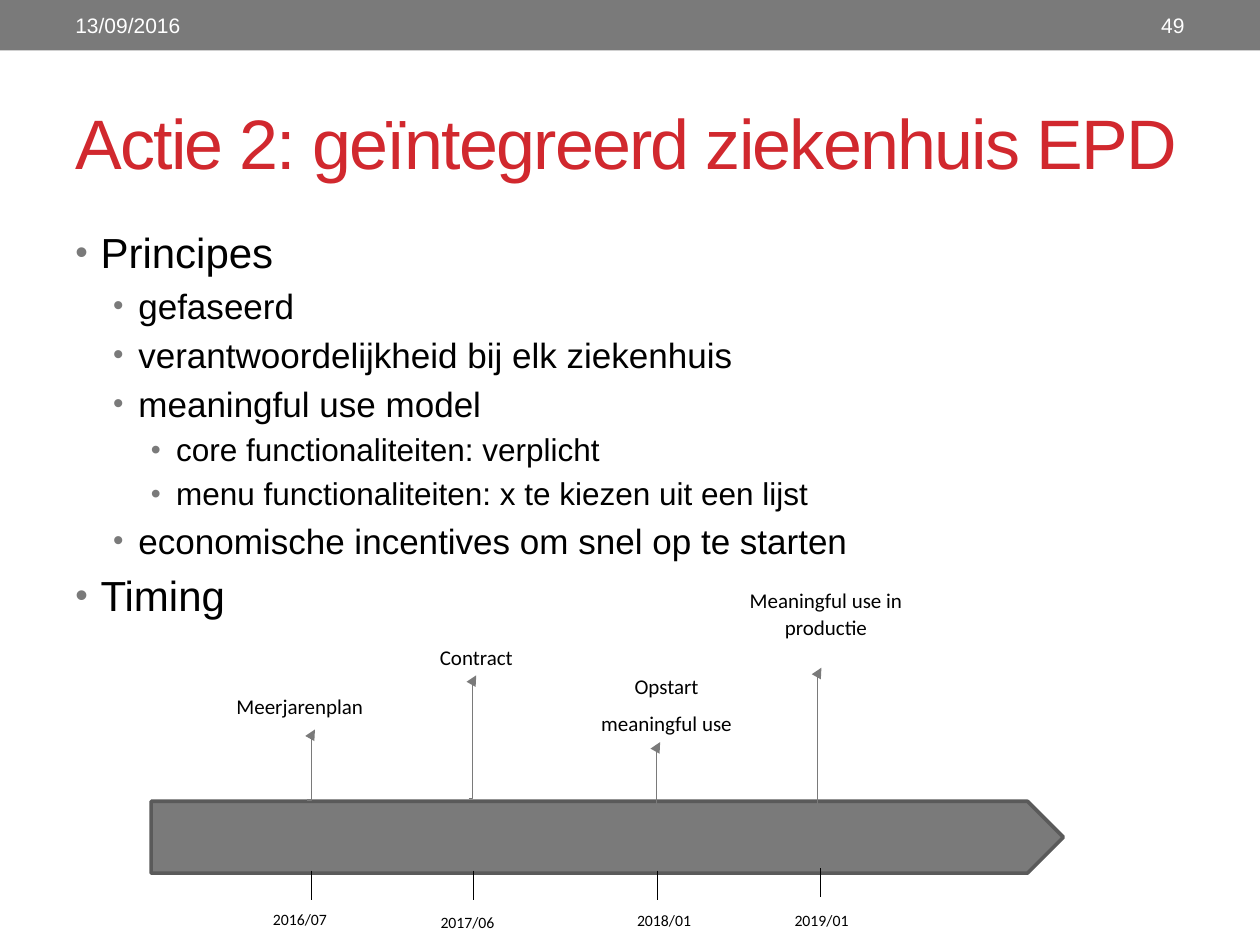
import pptx
import pptx.util
import pptx.dml.color
import pptx.enum.shapes
import pptx.enum.text
import pptx.oxml
import pptx.oxml.ns
import lxml.etree

Pt = pptx.util.Pt
RGBColor = pptx.dml.color.RGBColor
Align = pptx.enum.text.PP_ALIGN
Anchor = pptx.enum.text.MSO_ANCHOR
Shape = pptx.enum.shapes.MSO_SHAPE
Connector = pptx.enum.shapes.MSO_CONNECTOR

RED = RGBColor(0xD1, 0x28, 0x2E)
GREY = RGBColor(0x7A, 0x7A, 0x7A)
DARK_GREY = RGBColor(0x5A, 0x5A, 0x5A)
BLACK = RGBColor(0, 0, 0)
WHITE = RGBColor(255, 255, 255)

SLIDE_WIDTH, SLIDE_HEIGHT = pptx.util.Inches(10), pptx.util.Inches(7.5)
COLUMN, ROW = SLIDE_WIDTH / 100, SLIDE_HEIGHT / 75

HEADER_BOX = (0, 0, 100, 4)
TITLE_BOX = (5, 5.8, 90, 10.8)
BODY_BOX = (5, 17.5, 90, 53.3)
TIMELINE_BOX = (12, 46, 72.4, 29.3)

LEVELS = [(24, 0.2, 85), (20, 0.5, 85), (18, 0.8, 90)]
HANGING = 0.2
OUTLINE = [
    (0, "Principes"),
    (1, "gefaseerd"),
    (1, "verantwoordelijkheid bij elk ziekenhuis"),
    (1, "meaningful use model"),
    (2, "core functionaliteiten: verplicht"),
    (2, "menu functionaliteiten: x te kiezen uit een lijst"),
    (1, "economische incentives om snel op te starten"),
    (0, "Timing"),
]

BAR = (0, 17.6, 72.4, 5.7)
ELBOW_WIDTH, TICK_LENGTH = 0.6, 2.3
DATE_WIDTH, DATE_HEIGHT = 8.8, 3.5
MILESTONES = [
    dict(label=["Meerjarenplan"], label_box=(4.3, 8.5, 15, 3.5), wrap=False,
         arrow=(12.4, 17.5, 11.9), tick=(12.7, 23.1),
         date="2016/07", date_at=(7.4, 25.7)),
    dict(label=["Contract"], label_box=(17.2, 4.6, 17.2, 6), wrap=True,
         arrow=(25.2, 17.4, 7.6), tick=(25.6, 23.1),
         date="2017/06", date_at=(20.7, 25.9)),
    dict(label=["Opstart", "meaningful use"], label_box=(32.3, 6.9, 17.2, 7), wrap=True,
         arrow=(39.8, 18, 12.9), tick=(40.2, 23.1),
         date="2018/01", date_at=(36.3, 25.8)),
    dict(label=["Meaningful use in productie"], label_box=(44.5, 0.1, 18.1, 5.9), wrap=True,
         arrow=(52.6, 18.4, 7), tick=(53.1, 22.9),
         date="2019/01", date_at=(48.8, 25.8)),
]


def apply(target, values):
    """Set every attribute named in values on the target."""
    for name, value in values.items():
        setattr(target, name, value)


def place(box, part):
    """Return the slide position of a part given relative to its box."""
    left, top, width, height = part
    return (round((box[0] + left) * COLUMN), round((box[1] + top) * ROW),
            round(width * COLUMN), round(height * ROW))


def add_text(slide, area, lines, font, frame=None, paragraph=None):
    """Add a text box with one paragraph a line and return its paragraphs."""
    text_frame = slide.shapes.add_textbox(*area).text_frame
    apply(text_frame, {"word_wrap": True, **(frame or {})})
    for index, line in enumerate(lines):
        item = text_frame.add_paragraph() if index else text_frame.paragraphs[0]
        apply(item, paragraph or {})
        run = item.add_run()
        run.text = line
        apply(run.font, {key: value for key, value in font.items() if key != "color"})
        run.font.color.rgb = font["color"]
    return text_frame.paragraphs


def add_block(slide, preset, area, fill, border=None):
    """Add a filled preset shape with an optional (colour, width) border."""
    block = slide.shapes.add_shape(preset, *area)
    block.shadow.inherit = False
    block.fill.solid()
    block.fill.fore_color.rgb = fill
    if border:
        block.line.color.rgb, block.line.width = border
    else:
        block.line.fill.background()


def add_line(slide, kind, box, start, end, color, arrow=False):
    """Add a thin connector between two points of the box."""
    ends = place(box, (*start, 0, 0))[:2] + place(box, (*end, 0, 0))[:2]
    connector = slide.shapes.add_connector(kind, *ends)
    connector.line.color.rgb = color
    connector.line.width = Pt(0.75)
    properties = connector._element.spPr
    if arrow:
        tip = lxml.etree.SubElement(properties.find(pptx.oxml.ns.qn("a:ln")),
                                    pptx.oxml.ns.qn("a:tailEnd"))
        tip.set("type", "triangle")
    lxml.etree.SubElement(properties, pptx.oxml.ns.qn("a:effectLst"))


def add_bullet(paragraph, level):
    """Give a paragraph the indent, spacing and bullet of its outline level."""
    _, indent, size = LEVELS[level]
    paragraph.level = level
    properties = paragraph._p.get_or_add_pPr()
    properties.set("marL", str(pptx.util.Inches(indent)))
    properties.set("indent", str(-pptx.util.Inches(HANGING)))
    namespace = pptx.oxml.ns.nsdecls("a")
    for xml in (
        f'<a:spcBef {namespace}><a:spcPct val="20000"/></a:spcBef>',
        f'<a:buClr {namespace}><a:srgbClr val="{GREY}"/></a:buClr>',
        f'<a:buSzPct {namespace} val="{size * 1000}"/>',
        f'<a:buFont {namespace} typeface="Arial"/>',
        f'<a:buChar {namespace} char="•"/>',
    ):
        properties.append(pptx.oxml.parse_xml(xml))


def header(slide, box):
    """Draw the top band with the date and the page number."""
    add_block(slide, Shape.RECTANGLE, place(box, (0, 0, *box[2:])), GREY)
    font = dict(name="Arial", size=Pt(12), color=WHITE)
    for text, part, alignment in (("13/09/2016", (5, 0.2, 31.7, 3.6), Align.LEFT),
                                  ("49", (83.3, 0.2, 11.7, 3.6), Align.RIGHT)):
        add_text(slide, place(box, part), [text], font,
                 dict(vertical_anchor=Anchor.MIDDLE), dict(alignment=alignment))


def title(slide, box):
    """Write the slide title."""
    heading, = add_text(slide, place(box, (0, 0, *box[2:])),
                        ["Actie 2: geïntegreerd ziekenhuis EPD"],
                        dict(name="Arial", size=Pt(40), color=RED),
                        dict(vertical_anchor=Anchor.MIDDLE))
    heading.runs[0].font._element.set("spc", "-100")


def body(slide, box):
    """Write the bulleted outline."""
    paragraphs = add_text(slide, place(box, (0, 0, *box[2:])),
                          [text for _, text in OUTLINE],
                          dict(name="Arial", color=BLACK))
    for paragraph, (level, _) in zip(paragraphs, OUTLINE):
        add_bullet(paragraph, level)
        paragraph.runs[0].font.size = Pt(LEVELS[level][0])


def timeline(slide, box):
    """Draw the time bar with its milestones."""
    add_block(slide, Shape.PENTAGON, place(box, BAR), GREY, (DARK_GREY, Pt(2.08)))
    side, edge = round(0.7 * COLUMN), round(0.4 * ROW)
    frame = dict(margin_left=side, margin_right=side, margin_top=edge, margin_bottom=edge)
    spacing = dict(alignment=Align.CENTER, line_spacing=1.07, space_after=Pt(6))
    font = dict(name="Calibri", color=BLACK)
    for milestone in MILESTONES:
        x, bottom, top = milestone["arrow"]
        add_line(slide, Connector.ELBOW, box, (x, bottom), (x + ELBOW_WIDTH, top), GREY, True)
        x, top = milestone["tick"]
        add_line(slide, Connector.STRAIGHT, box, (x, top), (x, top + TICK_LENGTH), BLACK)
        add_text(slide, place(box, (*milestone["date_at"], DATE_WIDTH, DATE_HEIGHT)),
                 [milestone["date"]], {**font, "size": Pt(9)},
                 {**frame, "word_wrap": False}, spacing)
        add_text(slide, place(box, milestone["label_box"]), milestone["label"],
                 {**font, "size": Pt(12)},
                 {**frame, "word_wrap": milestone["wrap"]}, spacing)


def main():
    """Build and save the slide."""
    presentation = pptx.Presentation()
    apply(presentation, dict(slide_width=SLIDE_WIDTH, slide_height=SLIDE_HEIGHT))
    slide = presentation.slides.add_slide(presentation.slide_layouts[6])
    header(slide, HEADER_BOX)
    title(slide, TITLE_BOX)
    body(slide, BODY_BOX)
    timeline(slide, TIMELINE_BOX)
    presentation.save("out.pptx")


if __name__ == "__main__":
    main()
